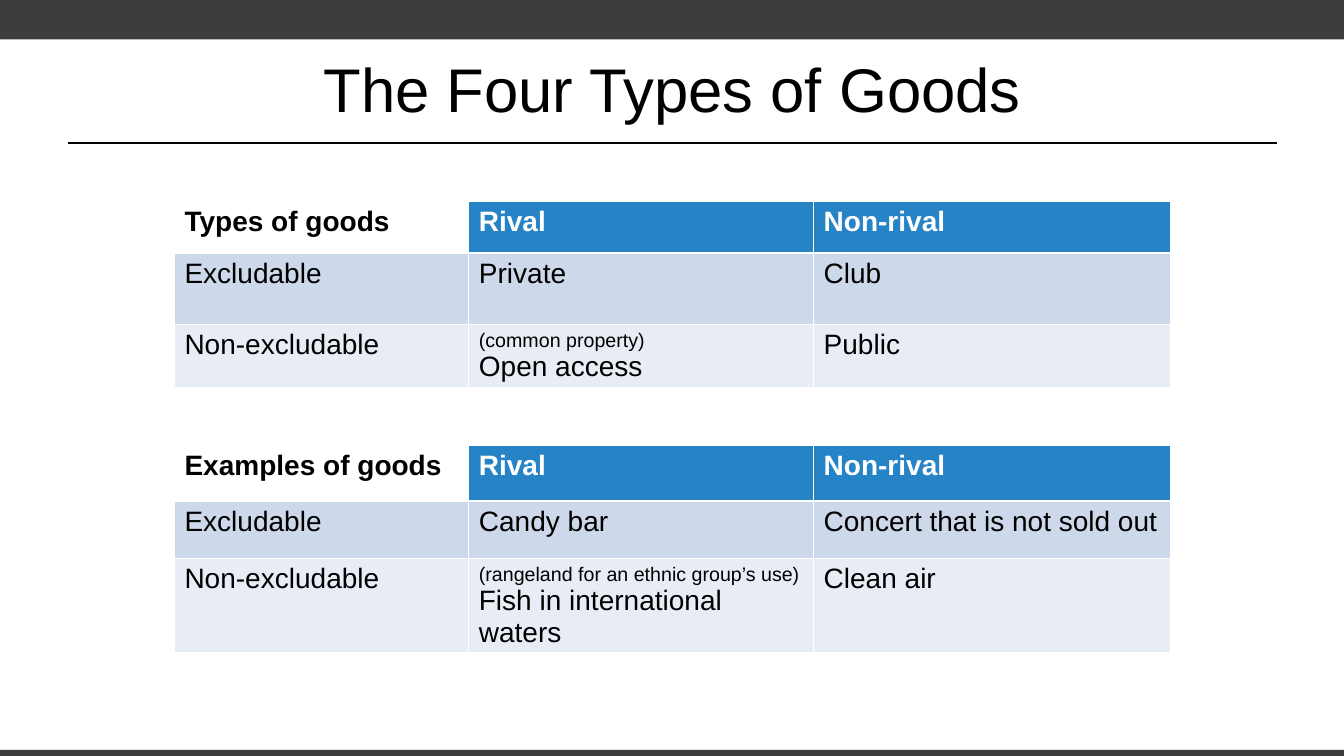
"""Build a slide with two tables that sort goods by rivalry and excludability."""
from dataclasses import dataclass

from pptx import Presentation
from pptx.dml.color import RGBColor
from pptx.enum import shapes, text
from pptx.oxml import ns
from pptx.slide import Slide
from pptx.text.text import _Paragraph as Paragraph
from pptx.util import Inches, Pt
from lxml import etree


@dataclass(frozen=True)
class Theme:
    font: str = "Arial"
    ink: RGBColor = RGBColor(0x00, 0x00, 0x00)
    light: RGBColor = RGBColor(0xFF, 0xFF, 0xFF)
    bar: RGBColor = RGBColor(0x3E, 0x3D, 0x3C)
    header: RGBColor = RGBColor(0x26, 0x83, 0xC6)
    bands: tuple[RGBColor, ...] = (RGBColor(0xCD, 0xD9, 0xEA), RGBColor(0xE8, 0xED, 0xF5))
    title_size: int = 44
    body_size: int = 20
    note_size: int = 14


@dataclass(frozen=True)
class Bar:
    top: float
    height: float


@dataclass(frozen=True)
class GoodsTable:
    top: float
    row_heights: tuple[float, ...]
    rows: tuple[tuple[str, ...], ...]


THEME = Theme()
SLIDE_WIDTH, SLIDE_HEIGHT = 13.33, 7.5
MARGIN, CONTENT_WIDTH = 0.67, 12
TABLE_LEFT = 1.73
COLUMN_WIDTHS = (2.92, 3.42, 3.54)
BARS = (Bar(0, 0.39), Bar(7.44, 0.06))
TABLES = (
    GoodsTable(2, (0.51, 0.71, 0.62), (
        ("Types of goods", "Rival", "Non-rival"),
        ("Excludable", "Private", "Club"),
        ("Non-excludable", "(common property)\nOpen access", "Public"),
    )),
    GoodsTable(4.42, (0.55, 0.57, 0.93), (
        ("Examples of goods", "Rival", "Non-rival"),
        ("Excludable", "Candy bar", "Concert that is not sold out"),
        ("Non-excludable",
         "(rangeland for an ethnic group’s use)\nFish in international waters",
         "Clean air"),
    )),
)


def style_paragraph(para: Paragraph, size: int, color: RGBColor, bold: bool = False) -> None:
    for span in para.runs:
        span.font.name = THEME.font
        span.font.size = Pt(size)
        span.font.bold = bold
        span.font.color.rgb = color


def draw_bar(page: Slide, bar: Bar) -> None:
    box = page.shapes.add_shape(shapes.MSO_SHAPE.RECTANGLE, 0, Inches(bar.top),
                                Inches(SLIDE_WIDTH), Inches(bar.height))
    box.shadow.inherit = False
    box.fill.solid()
    box.fill.fore_color.rgb = THEME.bar
    box.line.fill.background()


def draw_rule(page: Slide, top: float) -> None:
    rule = page.shapes.add_connector(shapes.MSO_CONNECTOR.STRAIGHT, Inches(MARGIN), Inches(top),
                                     Inches(MARGIN + CONTENT_WIDTH), Inches(top))
    rule.line.color.rgb = THEME.ink
    rule.line.width = Pt(1.25)
    etree.SubElement(rule._element.spPr, ns.qn("a:effectLst"))


def draw_title(page: Slide, wording: str) -> None:
    title = page.shapes.title
    title.left, title.top = Inches(MARGIN), Inches(0.25)
    title.width, title.height = Inches(CONTENT_WIDTH), Inches(1.25)
    frame = title.text_frame
    frame.text = wording
    frame.vertical_anchor = text.MSO_ANCHOR.MIDDLE
    para = frame.paragraphs[0]
    para.alignment = text.PP_ALIGN.CENTER
    style_paragraph(para, THEME.title_size, THEME.ink)


def draw_table(page: Slide, goods: GoodsTable) -> None:
    frame = page.shapes.add_table(len(goods.rows), len(COLUMN_WIDTHS), Inches(TABLE_LEFT),
                                  Inches(goods.top), Inches(sum(COLUMN_WIDTHS)),
                                  Inches(sum(goods.row_heights)))
    table = frame.table
    for column, width in zip(table.columns, COLUMN_WIDTHS):
        column.width = Inches(width)
    for row_index, (wordings, height) in enumerate(zip(goods.rows, goods.row_heights)):
        table.rows[row_index].height = Inches(height)
        is_header = row_index == 0
        for column_index, wording in enumerate(wordings):
            cell = table.cell(row_index, column_index)
            is_corner = is_header and column_index == 0
            if is_corner:
                cell.fill.background()
            else:
                cell.fill.solid()
                cell.fill.fore_color.rgb = (
                    THEME.header if is_header else THEME.bands[row_index - 1])
            color = THEME.light if is_header and not is_corner else THEME.ink
            cell.text_frame.text = wording
            for para in cell.text_frame.paragraphs:
                size = THEME.note_size if para.text.startswith("(") else THEME.body_size
                style_paragraph(para, size, color, is_header)


def main() -> None:
    deck = Presentation()
    deck.slide_width, deck.slide_height = Inches(SLIDE_WIDTH), Inches(SLIDE_HEIGHT)
    page = deck.slides.add_slide(deck.slide_layouts.get_by_name("Title Only"))
    for bar in BARS:
        draw_bar(page, bar)
    draw_rule(page, 1.42)
    draw_title(page, "The Four Types of Goods")
    for goods in TABLES:
        draw_table(page, goods)
    deck.save("out.pptx")


if __name__ == "__main__":
    main()
